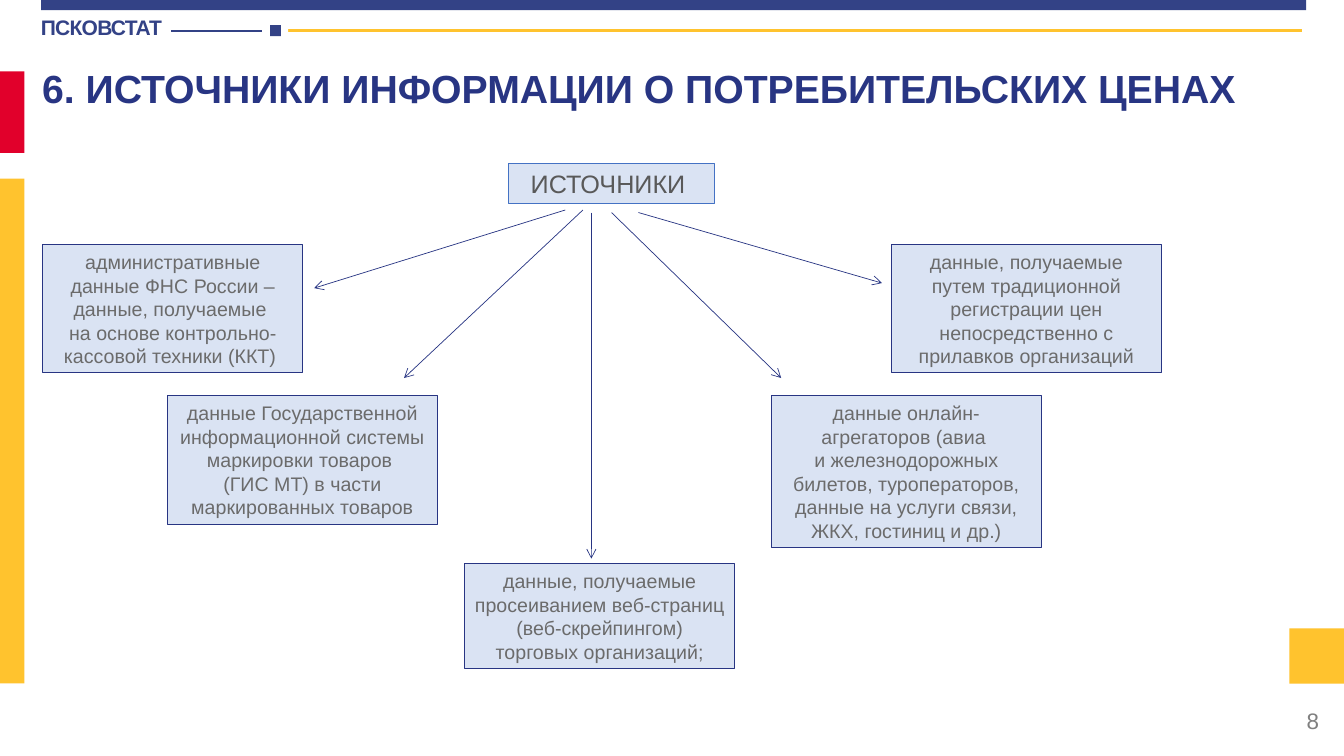
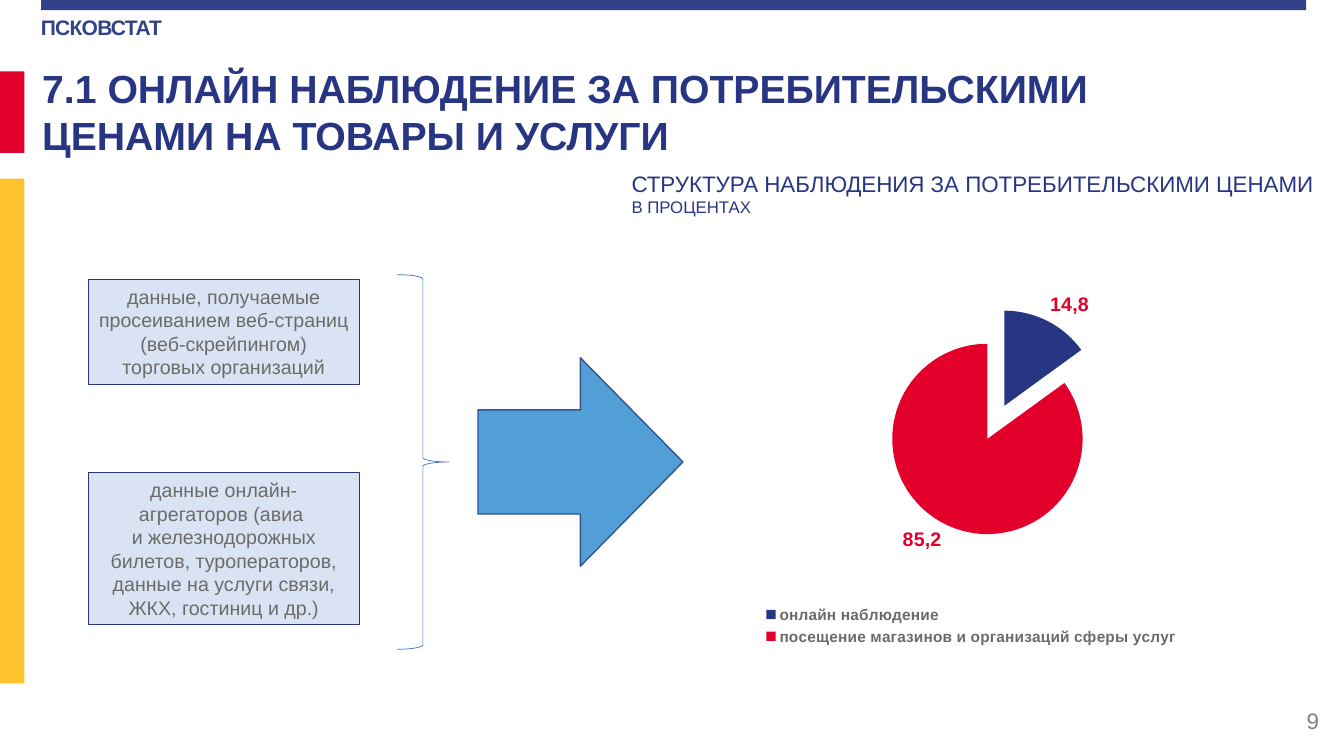
import dataclasses
import typing

import lxml.etree
import pptx
import pptx.chart.data
import pptx.dml.color
import pptx.enum.chart
import pptx.enum.shapes
import pptx.enum.text
import pptx.oxml.ns
import pptx.shapes.autoshape
import pptx.slide
import pptx.util

COLUMNS, ROWS = 160, 90
CELL = pptx.util.Inches(7.5) / ROWS
FONT = "Arial"
NAVY, BAND, RED, YELLOW, WHITE = "283583", "334286", "E1002B", "FFC32E", "FFFFFF"
PALE, GREY, DARK_GREY, BLUE = "DAE3F3", "6B6B6B", "595959", "4472C4"
SLICE_RED = "E3002A"
BOX_WIDTH, LINE_ROWS, BOX_PADDING = 32.2, 2.82, 1.2
SERIES_EXPLOSION, ONLINE_EXPLOSION = 26, 13

SHAPE = pptx.enum.shapes.MSO_SHAPE
ALIGN = pptx.enum.text.PP_ALIGN
ANCHOR = pptx.enum.text.MSO_ANCHOR
qn = pptx.oxml.ns.qn


class Area(typing.NamedTuple):
    column: float
    row: float
    columns: float
    rows: float


@dataclasses.dataclass(frozen=True)
class Style:
    size: float
    color: str
    bold: bool = False
    align: ALIGN = ALIGN.LEFT
    tracking: int = 0


@dataclasses.dataclass(frozen=True)
class Source:
    column: float
    row: float
    lines: int
    paragraphs: tuple[str, ...]
    columns: float = BOX_WIDTH

    @property
    def area(self) -> Area:
        rows = self.lines * LINE_ROWS + BOX_PADDING
        return Area(self.column, self.row, self.columns, rows)


class Arrow(typing.NamedTuple):
    start: tuple[float, float]
    end: tuple[float, float]


class Slice(typing.NamedTuple):
    name: str
    value: int
    label: str
    color: str


BRAND = Style(15, BAND, bold=True, tracking=-50)
TITLE = Style(28, NAVY, bold=True)
NUMBER = Style(16, "808080", align=ALIGN.RIGHT)
HEADING = Style(18, DARK_GREY, align=ALIGN.CENTER)
BODY = Style(14, GREY, align=ALIGN.CENTER)

BANDS = (
    (Area(4.9, 0, 150.6, 1.2), BAND),
    (Area(0, 8.5, 2.9, 9.7), RED),
    (Area(0, 21.25, 2.9, 60.1), YELLOW),
)

SCRAPING = "данные, получаемые просеиванием веб-страниц (веб-скрейпингом) торговых организаций"
AGGREGATORS = (
    "данные онлайн-агрегаторов (авиа ",
    "и железнодорожных билетов, туроператоров, данные на услуги связи, ЖКХ, гостиниц и др.)",
)

SOURCES = (
    Source(5.1, 29.1, 5, (
        "административные данные ФНС России – данные, получаемые ",
        "на основе контрольно-кассовой техники (ККТ) ",
    ), columns=30.95),
    Source(19.9, 47.1, 5, (
        "данные Государственной информационной системы маркировки товаров ",
        "(ГИС МТ) в части маркированных товаров",
    )),
    Source(55.3, 67.1, 4, (SCRAPING + ";",)),
    Source(91.8, 47.1, 6, AGGREGATORS),
    Source(106.1, 29.1, 5, (
        "данные, получаемые путем традиционной регистрации цен "
        "непосредственно с прилавков организаций",
    )),
)

ARROWS = (
    Arrow((67.3, 25), (37.4, 34.3)),
    Arrow((69.4, 25), (48.1, 45)),
    Arrow((70.4, 25.3), (70.4, 66.5)),
    Arrow((72.8, 25.3), (93, 45)),
    Arrow((76, 25.3), (105, 33.7)),
)

ONLINE_SOURCES = (
    Source(10.55, 33.25, 4, (SCRAPING,)),
    Source(10.55, 56.25, 6, AGGREGATORS),
)

SLICES = (
    Slice("онлайн наблюдение", 15, "14,8", NAVY),
    Slice("посещение магазинов и организаций сферы услуг", 85, "85,2", SLICE_RED),
)


def color(value: str) -> pptx.dml.color.RGBColor:
    return pptx.dml.color.RGBColor.from_string(value)


def cells(*lengths: float) -> list[int]:
    return [round(length * CELL) for length in lengths]


def set_font(font: typing.Any, style: Style) -> None:
    font.name = FONT
    font.size = pptx.util.Pt(style.size)
    font.bold = style.bold
    font.color.rgb = color(style.color)


def add_paragraph(frame: typing.Any, index: int, text: str, style: Style) -> None:
    para = frame.add_paragraph() if index else frame.paragraphs[0]
    para.alignment = style.align
    span = para.add_run()
    span.text = text
    set_font(span.font, style)
    if style.tracking:
        span.font._element.set("spc", str(style.tracking))


def write(frame: typing.Any, lines: typing.Iterable[tuple[str, Style]]) -> None:
    frame.word_wrap = True
    for index, (text, style) in enumerate(lines):
        add_paragraph(frame, index, text, style)


def add_text(page: pptx.slide.Slide, area: Area, *lines: tuple[str, Style],
             anchor: ANCHOR = ANCHOR.TOP, inset: bool = True) -> None:
    frame = page.shapes.add_textbox(*cells(*area)).text_frame
    frame.vertical_anchor = anchor
    if not inset:
        frame.margin_left = frame.margin_right = 0
        frame.margin_top = frame.margin_bottom = 0
    write(frame, lines)


def add_figure(page: pptx.slide.Slide, area: Area, fill: str | None,
               line: str | None = None, width: float = 0.75,
               kind: SHAPE = SHAPE.RECTANGLE) -> pptx.shapes.autoshape.Shape:
    figure = page.shapes.add_shape(kind, *cells(*area))
    figure.shadow.inherit = False
    if fill:
        figure.fill.solid()
        figure.fill.fore_color.rgb = color(fill)
    else:
        figure.fill.background()
    if line:
        figure.line.color.rgb = color(line)
        figure.line.width = pptx.util.Pt(width)
    else:
        figure.line.fill.background()
    return figure


def add_line(page: pptx.slide.Slide, arrow: Arrow, stroke: str,
             width: float, pointed: bool = False) -> None:
    line = page.shapes.add_connector(
        pptx.enum.shapes.MSO_CONNECTOR.STRAIGHT, *cells(*arrow.start, *arrow.end))
    line.line.color.rgb = color(stroke)
    line.line.width = pptx.util.Pt(width)
    if pointed:
        lxml.etree.SubElement(line.line._get_or_add_ln(), qn("a:tailEnd"), type="arrow")
    lxml.etree.SubElement(line._element.spPr, qn("a:effectLst"))


def add_source(page: pptx.slide.Slide, source: Source) -> None:
    box = add_figure(page, source.area, PALE, NAVY)
    write(box.text_frame, [(text, BODY) for text in source.paragraphs])


def add_page(deck: typing.Any, number: int, title: str) -> pptx.slide.Slide:
    page = deck.slides.add_slide(deck.slide_layouts[6])
    for area, fill in BANDS:
        add_figure(page, area, fill)
    add_text(page, Area(4.85, 1.7, 17.6, 3.2), ("ПСКОВСТАТ", BRAND), inset=False)
    add_text(page, Area(3.85, 7.05, 146.4, 5.5), (title, TITLE))
    add_text(page, Area(122.2, 83.4, 36, 4.8), (str(number), NUMBER), anchor=ANCHOR.MIDDLE)
    return page


def place_plot(chart: typing.Any, x: float, y: float, w: float, h: float) -> None:
    plot_area = chart._chartSpace.chart.plotArea
    for old in plot_area.findall(qn("c:layout")):
        plot_area.remove(old)
    layout = lxml.etree.Element(qn("c:layout"))
    manual = lxml.etree.SubElement(layout, qn("c:manualLayout"))
    settings = (("layoutTarget", "inner"), ("xMode", "edge"), ("yMode", "edge"),
                ("x", x), ("y", y), ("w", w), ("h", h))
    for name, value in settings:
        lxml.etree.SubElement(manual, qn("c:" + name), val=str(value))
    plot_area.insert(0, layout)


def explode_before(element: typing.Any, share: int) -> None:
    element.addprevious(lxml.etree.Element(qn("c:explosion"), val=str(share)))


def add_pie(page: pptx.slide.Slide, area: Area) -> None:
    data = pptx.chart.data.CategoryChartData()
    data.categories = [part.name for part in SLICES]
    data.add_series("Series 1", [part.value for part in SLICES])
    chart = page.shapes.add_chart(
        pptx.enum.chart.XL_CHART_TYPE.PIE, *cells(*area), data).chart
    chart.has_title = False
    chart.font.name = FONT
    chart.font.size = pptx.util.Pt(18)
    chart.has_legend = True
    chart.legend.position = pptx.enum.chart.XL_LEGEND_POSITION.BOTTOM
    chart.legend.include_in_layout = False
    set_font(chart.legend.font, Style(11, GREY, bold=True))
    place_plot(chart, 0.33, 0.15, 0.44, 0.63)
    chart.plots[0].vary_by_categories = True
    label_style = Style(14, SLICE_RED, bold=True, align=ALIGN.CENTER)
    for index, part in enumerate(SLICES):
        point = chart.plots[0].series[0].points[index]
        point.format.fill.solid()
        point.format.fill.fore_color.rgb = color(part.color)
        add_paragraph(point.data_label.text_frame, 0, part.label, label_style)
        point.data_label.position = pptx.enum.chart.XL_LABEL_POSITION.OUTSIDE_END
    online = chart._chartSpace.find(".//" + qn("c:dPt"))
    explode_before(online, SERIES_EXPLOSION)
    explode_before(online.find(qn("c:spPr")), ONLINE_EXPLOSION)


def build_sources(deck: typing.Any) -> None:
    page = add_page(deck, 8, "6. ИСТОЧНИКИ ИНФОРМАЦИИ О ПОТРЕБИТЕЛЬСКИХ ЦЕНАХ")
    add_line(page, Arrow((20.4, 3.7), (33.5, 3.7)), BAND, 2)
    add_line(page, Arrow((33.5, 3.65), (155, 3.65)), YELLOW, 2)
    add_figure(page, Area(31.2, 3, 3.1, 1.3), WHITE)
    add_figure(page, Area(32.15, 3, 1.3, 1.3), BAND)
    add_figure(page, Area(153.5, 74.8, 6.5, 6.6), YELLOW)
    heading = add_figure(page, Area(60.5, 19.45, 24.6, 4.8), PALE, BLUE)
    write(heading.text_frame, [("ИСТОЧНИКИ ", HEADING)])
    for source in SOURCES:
        add_source(page, source)
    for arrow in ARROWS:
        add_line(page, arrow, NAVY, 0.5, pointed=True)


def build_structure(deck: typing.Any) -> None:
    page = add_page(
        deck, 9, "7.1 ОНЛАЙН НАБЛЮДЕНИЕ ЗА ПОТРЕБИТЕЛЬСКИМИ ЦЕНАМИ НА ТОВАРЫ И УСЛУГИ")
    for source in ONLINE_SOURCES:
        add_source(page, source)
    add_figure(page, Area(47.25, 32.7, 6.2, 44.6), None, BLUE, 0.5, SHAPE.RIGHT_BRACE)
    add_figure(page, Area(56.9, 42.6, 24.4, 24.8), "529FD8", "325491", 1, SHAPE.RIGHT_ARROW)
    add_text(page, Area(74, 19.65, 84.1, 6.8),
             ("СТРУКТУРА НАБЛЮДЕНИЯ ЗА ПОТРЕБИТЕЛЬСКИМИ ЦЕНАМИ", Style(16, NAVY)),
             ("В ПРОЦЕНТАХ", Style(12, NAVY)))
    add_pie(page, Area(83.2, 25.6, 64.9, 51.7))


def main() -> None:
    deck = pptx.Presentation()
    deck.slide_width, deck.slide_height = cells(COLUMNS, ROWS)
    build_sources(deck)
    build_structure(deck)
    deck.save("out.pptx")


if __name__ == "__main__":
    main()
